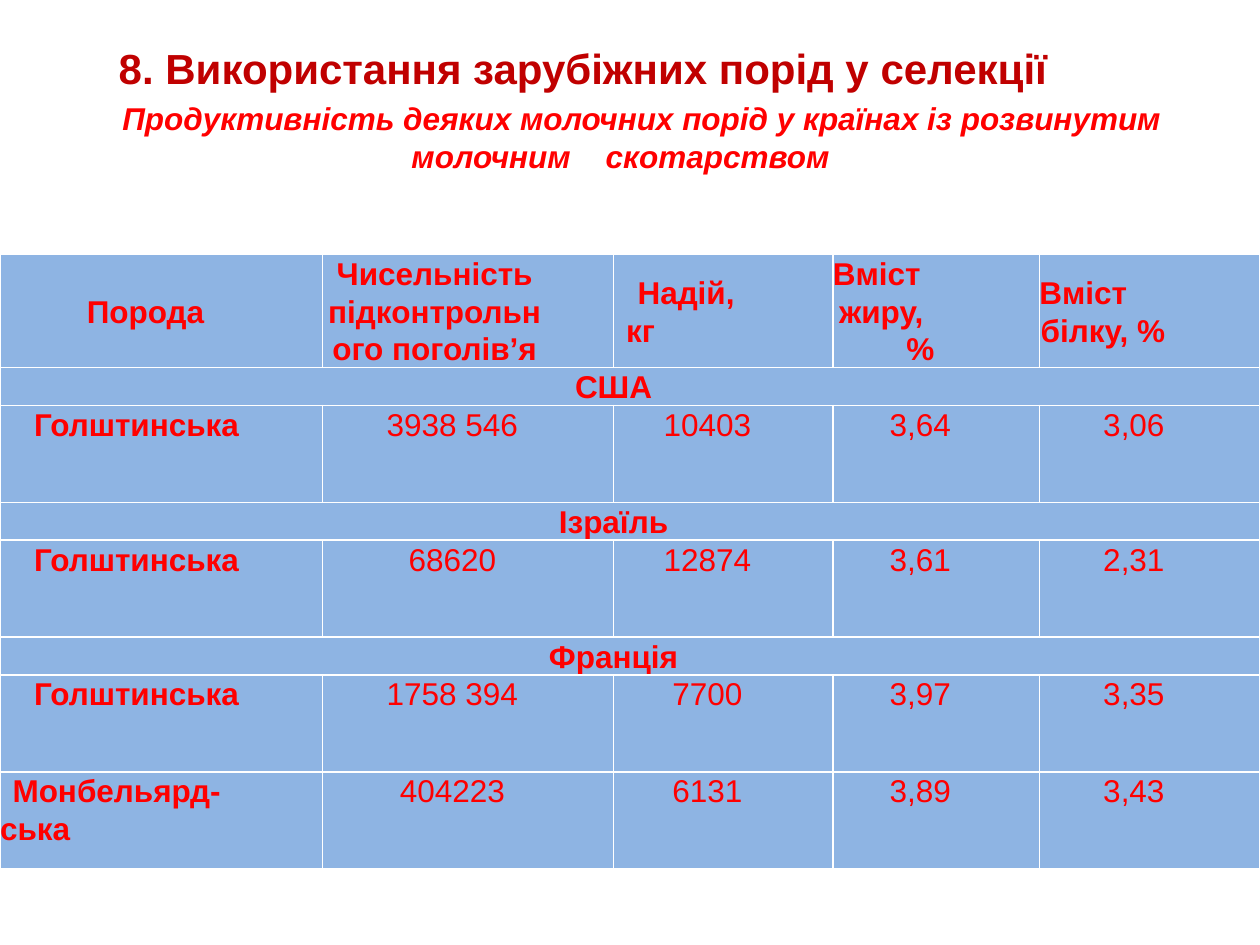
"""Builds a slide with a table of dairy breed productivity by country."""
import pptx
import pptx.dml.color
import pptx.enum.text
import pptx.util

Inches = pptx.util.Inches
Align = pptx.enum.text.PP_ALIGN
Anchor = pptx.enum.text.MSO_ANCHOR


def color(value):
    return pptx.dml.color.RGBColor.from_string(value)


def style(paragraph, size, value, bold=True, align=Align.LEFT, left=0, indent=0, right=0):
    paragraph.alignment = align
    paragraph.font.name = "Arial"
    paragraph.font.size = pptx.util.Pt(size)
    paragraph.font.bold = bold
    paragraph.font.color.rgb = color(value)
    properties = paragraph._p.get_or_add_pPr()
    for name, length in (("marL", left), ("marR", right), ("indent", indent)):
        properties.set(name, str(Inches(length)))


presentation = pptx.Presentation()
presentation.slide_width = Inches(10)
presentation.slide_height = Inches(7.5)
slide = presentation.slides.add_slide(presentation.slide_layouts[5])

title = slide.shapes.title
title.left, title.top, title.width, title.height = map(Inches, (0.75, 0.29, 8.82, 0.5))
title.text_frame.text = " 8. Використання зарубіжних порід у селекції"
title.text_frame.vertical_anchor = Anchor.TOP
style(title.text_frame.paragraphs[0], 24, "C00000")

widths = [2.56, 2.31, 1.74, 1.64, 1.75]
heights = [0.79, 0.26, 0.77, 0.26, 0.77, 0.26, 0.77, 0.77]
rows = [
    ["Порода", "Чисельність підконтрольного поголів’я", "Надій, кг", "Вміст жиру, \n%", "Вміст білку, %"],
    ["США"],
    ["Голштинська", "3938 546", "10403", "3,64", "3,06"],
    ["Ізраїль"],
    ["Голштинська", "68620", "12874", "3,61", "2,31"],
    ["Франція"],
    ["Голштинська", "1758 394", "7700", "3,97", "3,35"],
    ["Монбельярд-ська", "404223", "6131", "3,89", "3,43"],
]
header_formats = [
    (Align.CENTER, 0.01, 0.27),
    (Align.CENTER, 0, 0),
    (Align.LEFT, 0.1, 0.09),
    (Align.JUSTIFY, 0.05, -0.05),
    (Align.JUSTIFY, 0.01, -0.01),
]
middle_columns = (0, 2, 4)

frame = slide.shapes.add_table(
    len(rows), len(widths), Inches(0), Inches(2.02), Inches(sum(widths)), Inches(sum(heights)))
table = frame.table
table.horz_banding = False
for column, width in zip(table.columns, widths):
    column.width = Inches(width)

for row_index, texts in enumerate(rows):
    table.rows[row_index].height = Inches(heights[row_index])
    is_country = len(texts) == 1
    for column_index in range(len(widths)):
        cell = table.cell(row_index, column_index)
        cell.margin_left = cell.margin_top = cell.margin_bottom = 0
        cell.margin_right = Inches(0.01)
        cell.fill.solid()
        cell.fill.fore_color.rgb = color("8EB4E3")
        if row_index == 0 and column_index in middle_columns:
            cell.vertical_anchor = Anchor.MIDDLE
        if column_index < len(texts):
            cell.text = texts[column_index]
        for line, paragraph in enumerate(cell.text_frame.paragraphs):
            align, left, indent = Align.CENTER, 0.01, 0.27
            if row_index == 0 and line == 0:
                align, left, indent = header_formats[column_index]
            elif is_country:
                left = 0
            elif row_index > 0 and column_index == 0:
                align, left = Align.LEFT, 0
                indent = 0.1 if row_index == len(rows) - 1 else 0.27
            bold = row_index == 0 or column_index == 0
            style(paragraph, 18, "FF0000", bold, align, left, indent, right=0.52)
            paragraph.line_spacing = 1.07
    if is_country:
        table.cell(row_index, 0).merge(table.cell(row_index, len(widths) - 1))

subtitle = slide.shapes.add_textbox(Inches(0.2), Inches(0.73), Inches(9.45), Inches(0.71))
subtitle.text_frame.word_wrap = True
subtitle.text_frame.vertical_anchor = Anchor.MIDDLE
subtitle.text_frame.text = (
    " Продуктивність деяких молочних порід у країнах із розвинутим молочним    скотарством")
paragraph = subtitle.text_frame.paragraphs[0]
style(paragraph, 18, "FF0000", align=Align.CENTER, indent=0.27)
paragraph.font.italic = True

presentation.save("out.pptx")
